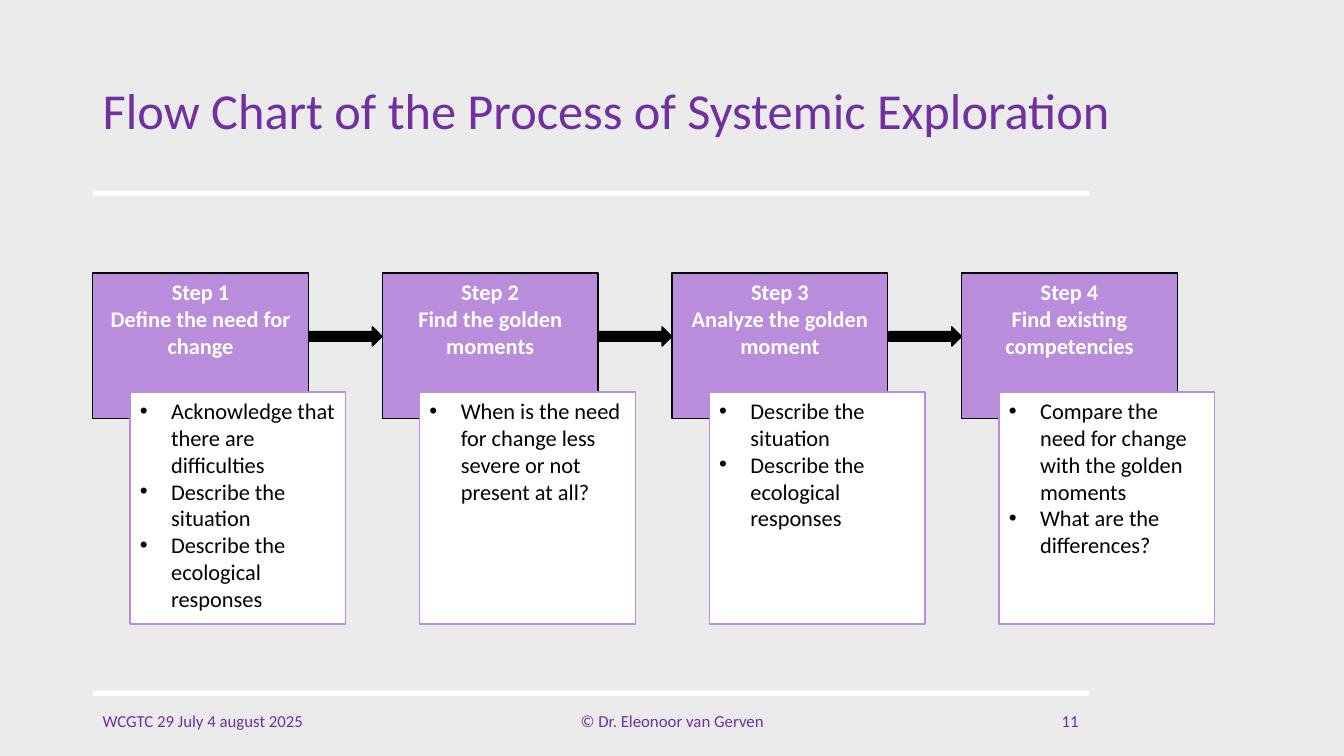
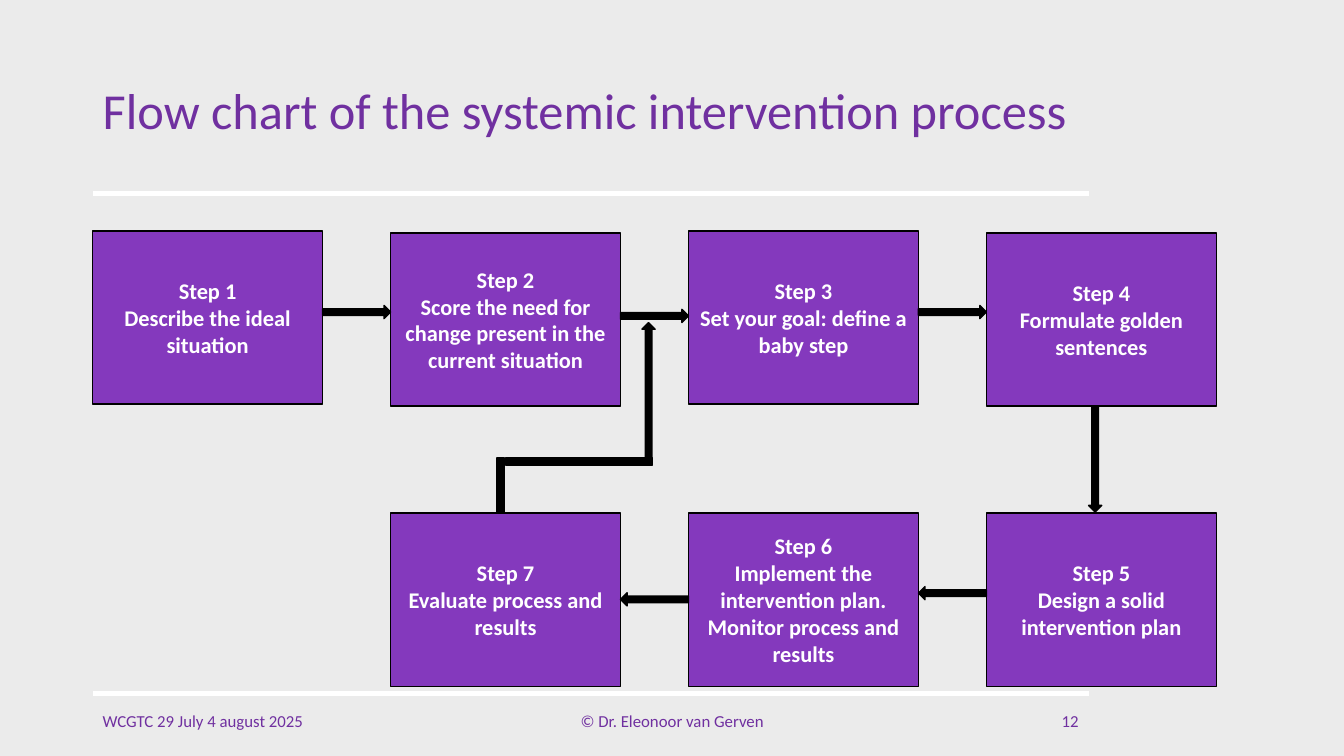
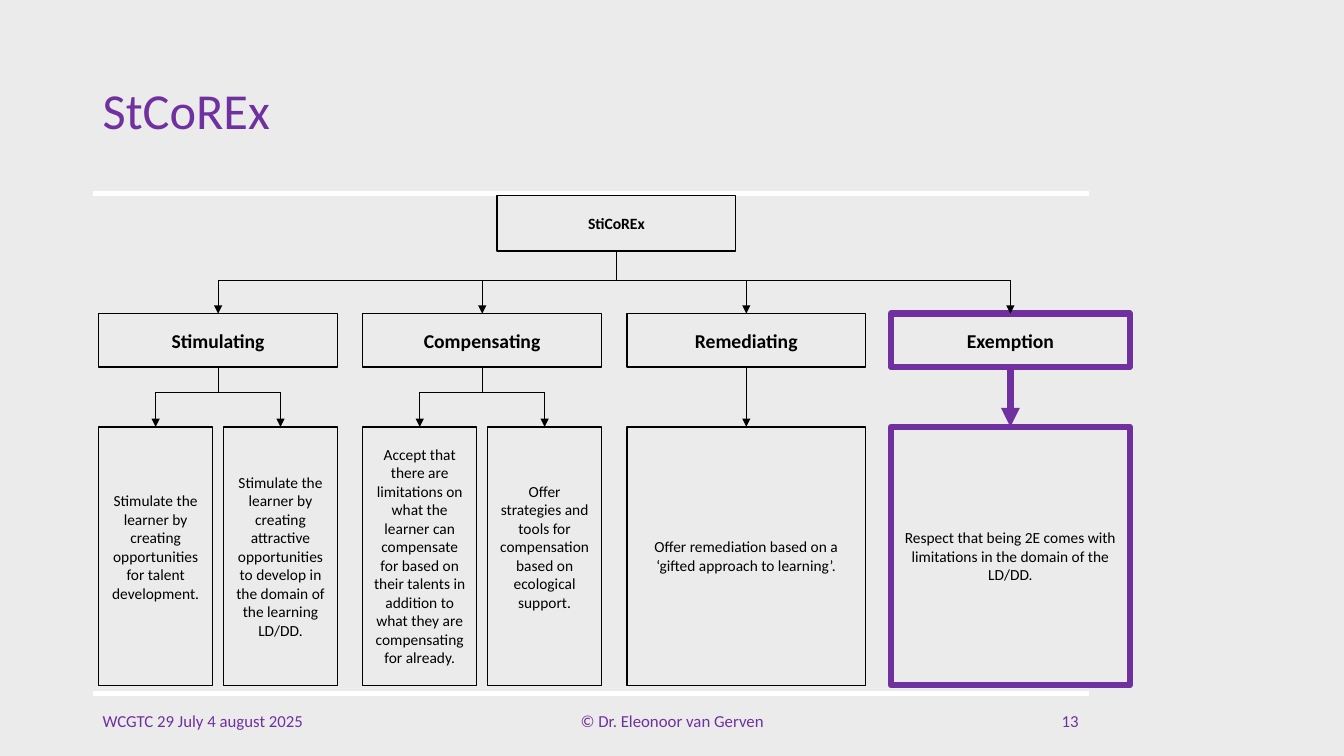
"""Build three slides of flow charts on systemic exploration and intervention."""
from lxml.etree import SubElement
from pptx import Presentation
from pptx.dml.color import RGBColor
from pptx.enum.shapes import MSO_CONNECTOR, MSO_SHAPE
from pptx.enum.text import MSO_ANCHOR, MSO_AUTO_SIZE, PP_ALIGN
from pptx.oxml.ns import qn
from pptx.util import Pt

COLORS = {
    "background": "EBEBEB",
    "purple": "7030A0",
    "step": "8439BD",
    "light_step": "BA8CDC",
    "white": "FFFFFF",
    "black": "000000",
}
FONT = "Calibri"
LEFT, RIGHT = 66.2, 777.6
BOTTOM, TOP_CENTER = 2, 0


def color(name):
    return RGBColor.from_string(COLORS[name])


class SlideBuilder:
    """Holds the shared style and the slide being built."""

    def __init__(self):
        self.deck = Presentation()
        self.deck.slide_width, self.deck.slide_height = Pt(960), Pt(540)
        fill = self.deck.slide_master.background.fill
        fill.solid()
        fill.fore_color.rgb = color("background")
        self.slide = None

    def start(self, title, number):
        self.slide = self.deck.slides.add_slide(self.deck.slide_layouts[5])
        for y in (138.2, 495.4):
            self.line((LEFT, y), (RIGHT, y), "white", 3)
        holder = self.slide.shapes.title
        holder.left, holder.top, holder.width, holder.height = map(Pt, (LEFT, 28.8, 759.6, 104.4))
        self.set_text(holder, [title], 36, "purple", align=PP_ALIGN.LEFT)
        holder.text_frame.paragraphs[0].line_spacing = 0.9
        self.footer("WCGTC 29 July 4 august 2025", LEFT, 216, PP_ALIGN.LEFT)
        self.footer("© Dr. Eleonoor van Gerven", 318.2, 324, PP_ALIGN.CENTER)
        self.footer(str(number), 678.2, 99.4, PP_ALIGN.RIGHT)

    def set_text(self, shape, lines, size, ink, bold=False, align=PP_ALIGN.CENTER,
                 anchor=MSO_ANCHOR.MIDDLE, bullets=False):
        frame = shape.text_frame
        frame.word_wrap = True
        frame.auto_size = MSO_AUTO_SIZE.NONE
        frame.vertical_anchor = anchor
        frame.text = "\n".join(lines)
        for para in frame.paragraphs:
            para.alignment = align
            if bullets:
                self.bullet(para)
            for span in para.runs:
                span.font.name, span.font.size, span.font.bold = FONT, Pt(size), bold
                span.font.color.rgb = color(ink)

    def bullet(self, para):
        properties = para._p.get_or_add_pPr()
        properties.set("marL", str(Pt(22.4)))
        properties.set("indent", str(-Pt(22.4)))
        SubElement(properties, qn("a:buFont"), typeface="Arial")
        SubElement(properties, qn("a:buChar"), char="•")

    def footer(self, text, x, width, align):
        box = self.slide.shapes.add_textbox(Pt(x), Pt(500.4), Pt(width), Pt(28.8))
        self.set_text(box, [text], 12, "purple", align=align)

    def shape(self, kind, x, y, width, height, fill="black", outline="black", weight=1):
        shape = self.slide.shapes.add_shape(kind, Pt(x), Pt(y), Pt(width), Pt(height))
        shape.shadow.inherit = False
        if fill:
            shape.fill.solid()
            shape.fill.fore_color.rgb = color(fill)
        else:
            shape.fill.background()
        shape.line.color.rgb = color(outline)
        shape.line.width = Pt(weight)
        return shape

    def box(self, lines, x, y, width, height, fill=None, outline="black", weight=1,
            size=16, ink="black", **text_style):
        box = self.shape(MSO_SHAPE.RECTANGLE, x, y, width, height, fill, outline, weight)
        self.set_text(box, lines, size, ink, **text_style)
        return box

    def line(self, start, end, ink="black", weight=0.5, arrow=False, source=None, target=None):
        connector = self.slide.shapes.add_connector(
            MSO_CONNECTOR.STRAIGHT, *map(Pt, (*start, *end)))
        if source:
            connector.begin_connect(source, BOTTOM)
        if target:
            connector.end_connect(target, TOP_CENTER)
        connector.line.color.rgb = color(ink)
        connector.line.width = Pt(weight)
        if arrow:
            SubElement(connector.line._get_or_add_ln(), qn("a:tailEnd"), type="triangle")
        SubElement(connector._element.spPr, qn("a:effectLst"))

    def branch(self, parent, children, bus_y):
        middle, *centers = [(box.left + box.width / 2) / Pt(1) for box in (parent, *children)]
        self.line((middle, bus_y), (middle, bus_y), source=parent)
        self.line((centers[0], bus_y), (centers[-1], bus_y))
        for center, child in zip(centers, children):
            self.line((center, bus_y), (center, bus_y), arrow=True, target=child)


def exploration(builder):
    builder.start("Flow Chart of the Process of Systemic Exploration", 11)
    steps = [
        ("Define the need for change",
         ["Acknowledge that there are difficulties", "Describe the situation",
          "Describe the ecological responses"]),
        ("Find the golden moments",
         ["When is the need for change less severe or not present at all?"]),
        ("Analyze the golden moment",
         ["Describe the situation", "Describe the ecological responses"]),
        ("Find existing competencies",
         ["Compare the need for change with the golden moments", "What are the differences?"]),
    ]
    pitch, width = 206.9, 154.2
    for index, (name, details) in enumerate(steps):
        x = LEFT + index * pitch
        builder.box([f"Step {index + 1}", name], x, 195.1, width, 103.8, "light_step",
                    ink="white", bold=True, anchor=MSO_ANCHOR.TOP)
        builder.box(details, x + 26.6, 280.1, width, 165.6, "white", "light_step",
                    align=PP_ALIGN.LEFT, anchor=MSO_ANCHOR.TOP, bullets=True)
        if index < len(steps) - 1:
            builder.shape(MSO_SHAPE.RIGHT_ARROW, x + width + 0.7, 233.5, 51.8, 13.7)


def intervention(builder):
    builder.start("Flow chart of the systemic intervention process", 12)
    steps = [
        ("Describe the ideal situation", 0, 164.9),
        ("Score the need for change present in the current situation", 1, 166.3),
        ("Set your goal: define a baby step", 2, 164.9),
        ("Formulate golden sentences", 3, 166.3),
        ("Design a solid intervention plan", 3, 366.5),
        ("Implement the intervention plan. Monitor process and results", 2, 366.5),
        ("Evaluate process and results", 1, 366.5),
    ]
    pitch, width, thickness = 212.8, 164.2, 9.4
    for number, (name, column, y) in enumerate(steps, 1):
        builder.box([f"Step {number}", name], LEFT + column * pitch, y, width, 123.8, "step",
                    ink="white", bold=True)
    arrows = [
        (MSO_SHAPE.RIGHT_ARROW, 0, 218.2),
        (MSO_SHAPE.RIGHT_ARROW, 1, 221),
        (MSO_SHAPE.RIGHT_ARROW, 2, 218.2),
        (MSO_SHAPE.LEFT_ARROW, 2, 419),
        (MSO_SHAPE.LEFT_ARROW, 1, 423.4),
    ]
    for kind, column, y in arrows:
        builder.shape(kind, LEFT + column * pitch + width, y, pitch - width, thickness)
    builder.shape(MSO_SHAPE.DOWN_ARROW, 777.6, 290.1, thickness, 75.6)
    builder.shape(MSO_SHAPE.RECTANGLE, 361, 327.2, 105, 5)
    builder.shape(MSO_SHAPE.UP_ARROW, 458.6, 230.4, thickness, 101.5)
    builder.shape(MSO_SHAPE.RECTANGLE, 355, 327.2, 5.6, 38.8)


def strategies(builder):
    builder.start("StCoREx", 13)
    groups = [
        ("Stimulating", [
            "Stimulate the learner by creating opportunities for talent development.",
            "Stimulate the learner by creating attractive opportunities to develop in the "
            "domain of the learning LD/DD."]),
        ("Compensating", [
            "Accept that there are limitations on what the learner can compensate for based on "
            "their talents in addition to what they are compensating for already.",
            "Offer strategies and tools for compensation based on ecological support."]),
        ("Remediating", ["Offer remediation based on a ‘gifted approach to learning’."]),
        ("Exemption", [
            "Respect that being 2E comes with limitations in the domain of the LD/DD."]),
    ]
    raised = {groups[0][1][0], groups[1][1][1]}
    width, leaf_width = 170.6, 81.4
    root = builder.box(["StiCoREx"], 355, 139.8, width, 39.4, size=11.2, bold=True)
    headers = []
    for index, (name, texts) in enumerate(groups):
        x = 70.5 + index * 188.65
        outline, weight = ("purple", 4.5) if name == "Exemption" else ("black", 1)
        header = builder.box([name], x, 224, width, 38.2, None, outline, weight,
                             size=14, bold=True)
        headers.append(header)
        leaves = []
        for position, text in enumerate(texts):
            leaf = builder.box([text], x + position * (width - leaf_width), 304.9,
                               leaf_width if len(texts) > 1 else width, 184.6,
                               None, outline, weight, size=11)
            if text in raised:
                leaf.text_frame.margin_bottom = Pt(17)
            leaves.append(leaf)
        if len(leaves) > 1:
            builder.branch(header, leaves, 280.2)
        else:
            builder.line((x, 262), (x, 305), outline, 4.5 if weight > 1 else 0.5, True,
                         header, leaves[0])
    builder.branch(root, headers, 200.2)


def main():
    builder = SlideBuilder()
    exploration(builder)
    intervention(builder)
    strategies(builder)
    builder.deck.save("out.pptx")


if __name__ == "__main__":
    main()
